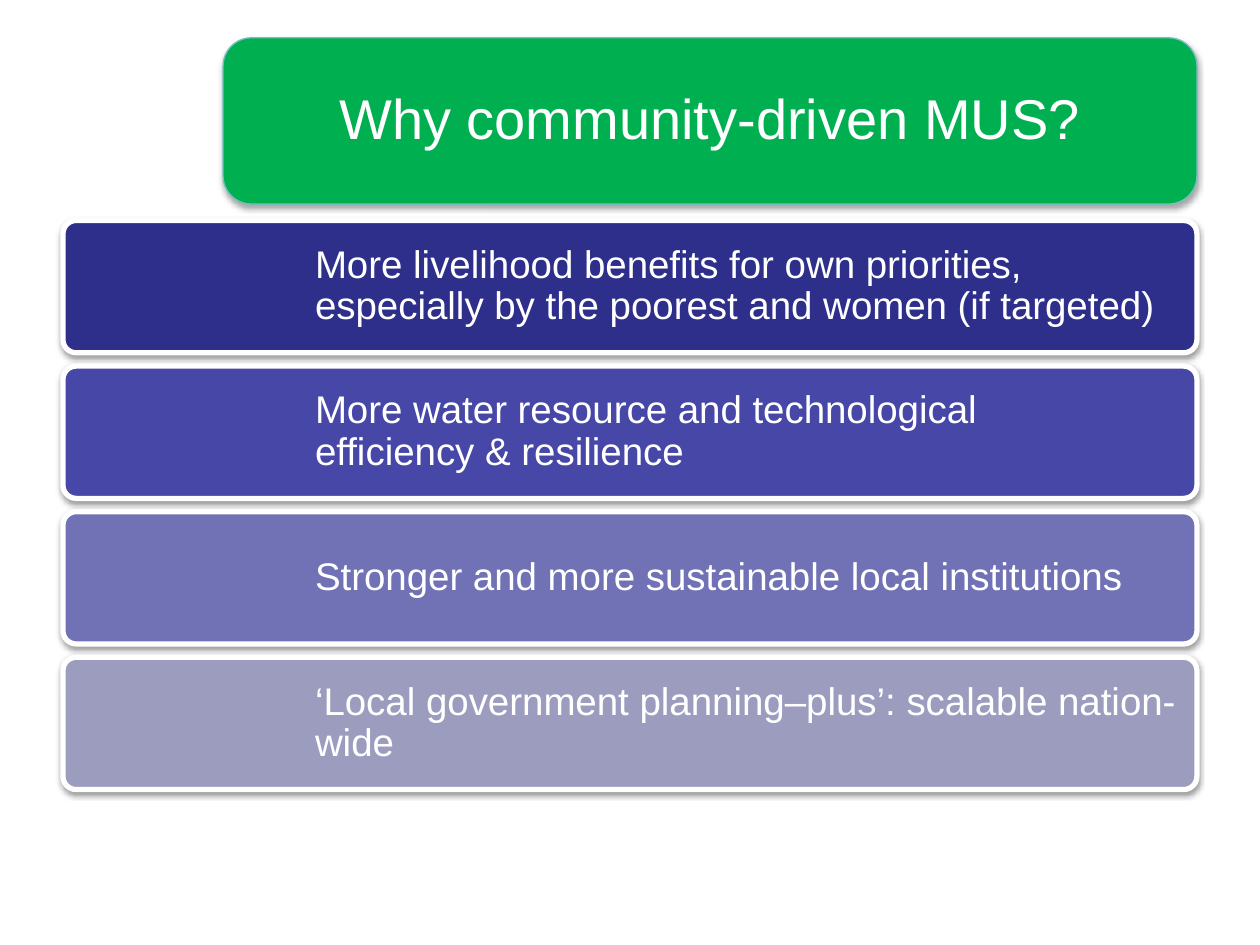
from lxml import etree
from pptx import Presentation
from pptx.dml.color import RGBColor
from pptx.enum import shapes, text
from pptx.oxml import ns
from pptx.util import Pt

BARS = [
    ("More livelihood benefits for own priorities, especially by the poorest "
     "and women (if targeted)", "2E2E8B"),
    ("More water resource and technological \vefficiency & resilience", "4747A8"),
    ("Stronger and more sustainable local institutions", "7171B5"),
    ("‘Local government planning–plus’: scalable nation-wide", "9C9CBF"),
]
BAR_TOP, BAR_HEIGHT, BAR_STEP = 126, 75.6, 83.2
BAR_CORNER = 0.1
CORNER_INSET = 0.29  # share of the corner radius that a rounded box keeps clear of text


def color(hex_code):
    return RGBColor.from_string(hex_code)


def add_shadow(shape, distance, opacity):
    """Soft black shadow below the shape; distance in points, opacity in percent."""
    shape.shadow.inherit = False
    effects = shape._element.spPr.find(ns.qn("a:effectLst"))
    outer = etree.SubElement(
        effects, ns.qn("a:outerShdw"), blurRad=str(Pt(3.1)), dist=str(Pt(distance)),
        dir="5400000", rotWithShape="0")
    black = etree.SubElement(outer, ns.qn("a:srgbClr"), val="000000")
    etree.SubElement(black, ns.qn("a:alpha"), val=str(opacity * 1000))


def add_rounded_box(page, left, top, width, height, corner, fill, line, line_width):
    box = page.shapes.add_shape(
        shapes.MSO_SHAPE.ROUNDED_RECTANGLE, Pt(left), Pt(top), Pt(width), Pt(height))
    box.adjustments[0] = corner
    box.fill.solid()
    box.fill.fore_color.rgb = color(fill)
    box.line.color.rgb = color(line)
    box.line.width = Pt(line_width)
    return box


def write_text(box, words, size, alignment, left_inset, inset):
    frame = box.text_frame
    frame.word_wrap = True
    frame.vertical_anchor = text.MSO_ANCHOR.MIDDLE
    frame.margin_left = Pt(left_inset)
    frame.margin_top = frame.margin_right = frame.margin_bottom = Pt(inset)
    para = frame.paragraphs[0]
    para.text = words
    para.alignment = alignment
    para.line_spacing = 0.9
    para.font.name = "Arial"
    para.font.size = Pt(size)
    para.font.color.rgb = color("FFFFFF")


def add_title(page, words):
    box = add_rounded_box(page, 127.5, 21.6, 556.5, 95, 0.17, "00B050", "72BFC5", 0.75)
    add_shadow(box, 1.8, 35)
    write_text(box, words, 32, text.PP_ALIGN.CENTER, 9.6, 9.6)


def add_bar(page, top, words, fill):
    box = add_rounded_box(page, 36, top, 648, BAR_HEIGHT, BAR_CORNER, fill, "FFFFFF", 3)
    add_shadow(box, 1.6, 38)
    clear = CORNER_INSET * BAR_CORNER * BAR_HEIGHT
    write_text(box, words, 22, text.PP_ALIGN.LEFT, 144 - clear, 6.6 - clear)


def main():
    deck = Presentation()
    deck.slide_width, deck.slide_height = Pt(720), Pt(540)
    page = deck.slides.add_slide(deck.slide_layouts[6])
    add_title(page, "Why community-driven MUS?")
    for row, (words, fill) in enumerate(BARS):
        add_bar(page, BAR_TOP + row * BAR_STEP, words, fill)
    deck.save("out.pptx")


if __name__ == "__main__":
    main()
